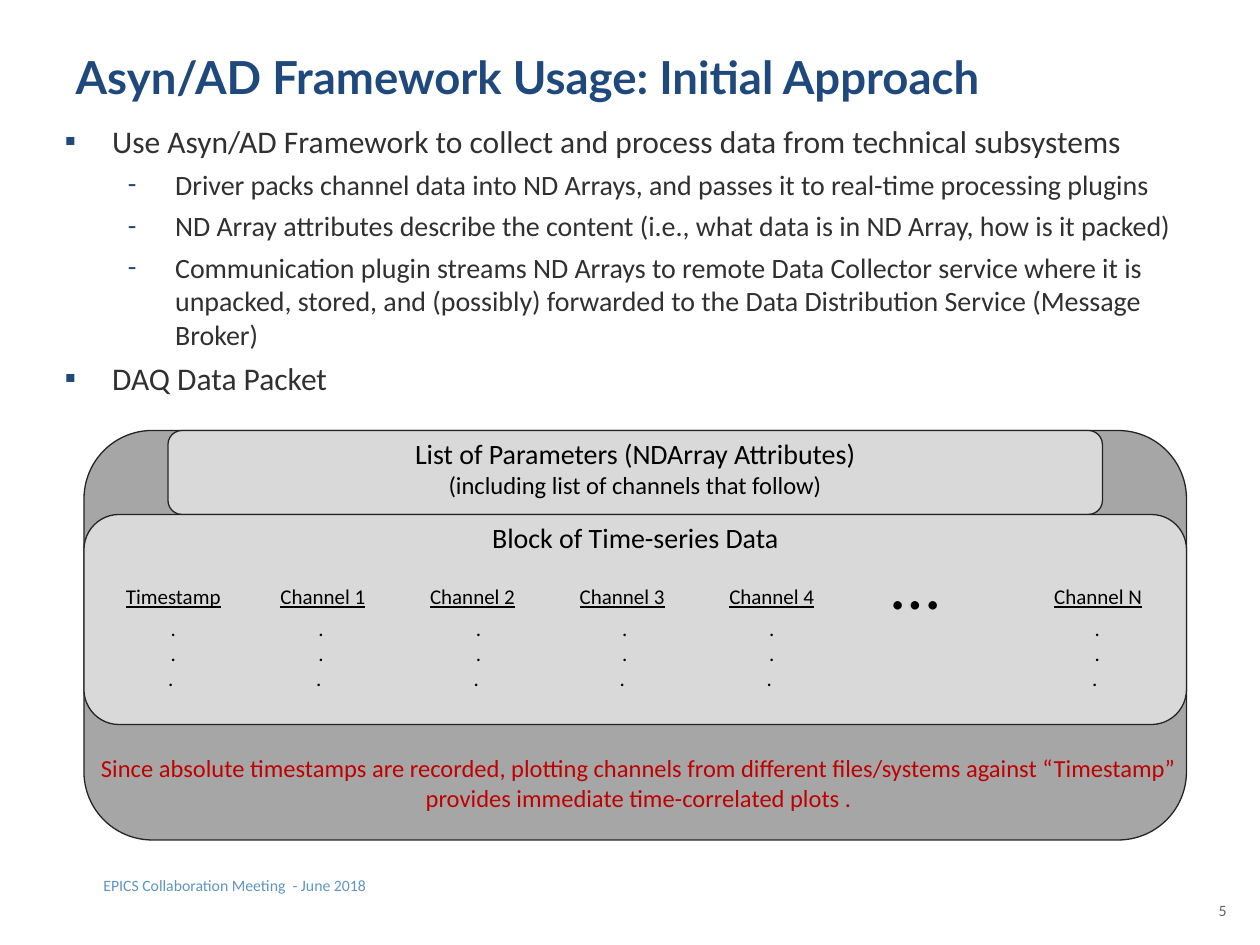
"""Build the slide on the first approach to using the Asyn/AD framework."""
from lxml.etree import SubElement
from pptx import Presentation
from pptx.dml.color import RGBColor as Rgb
from pptx.enum.shapes import MSO_SHAPE as Shape
from pptx.enum.text import MSO_ANCHOR as Anchor, PP_ALIGN as Align
from pptx.oxml.ns import qn
from pptx.util import Pt

HUES = {
    "navy": "1F497D", "text": "303030", "page": "616161", "sky": "5F95C4",
    "dark": "A6A6A6", "pale": "D9D9D9", "edge": "232425",
    "black": "000000", "red": "C00000",
}


class Deck:
    """Hold the style and the current slide."""

    def __init__(self):
        self.prs = Presentation()
        self.prs.slide_width, self.prs.slide_height = Pt(720), Pt(540)
        self.slide = self.prs.slides.add_slide(self.prs.slide_layouts[5])
        self.font = "Calibri"

    def hue(self, name):
        return Rgb.from_string(HUES[name])

    def run(self, para, text, size, hue, face=None, bold=False, under=False):
        run = para.add_run()
        run.text = text
        font = run.font
        font.name, font.size = face or self.font, Pt(size)
        font.bold, font.underline = bold, under
        font.color.rgb = self.hue(hue)

    def title(self, text, box):
        shape = self.slide.shapes.title
        shape.left, shape.top, shape.width, shape.height = map(Pt, box)
        frame = shape.text_frame
        frame.vertical_anchor = Anchor.MIDDLE
        para = frame.paragraphs[0]
        para.alignment = Align.LEFT
        self.run(para, text, 26, "navy", face="Lato", bold=True)

    def frame(self, box):
        frame = self.slide.shapes.add_textbox(*map(Pt, box)).text_frame
        frame.word_wrap = True
        return frame

    def paras(self, frame, items):
        for i, item in enumerate(items):
            yield i, frame.add_paragraph() if i else frame.paragraphs[0], item

    def text(self, box, lines, hue="black", align=Align.CENTER, under=False):
        for _, para, (text, size) in self.paras(self.frame(box), lines):
            para.alignment = align
            self.run(para, text, size, hue, under=under)

    def list(self, box, items):
        for i, para, (level, text) in self.paras(self.frame(box), items):
            para.level = level
            if i:
                para.space_before = Pt(4.5)
            self.bullet(para, "▪-"[level], (27, 63)[level])
            self.run(para, text, (18, 16)[level], "text")

    def bullet(self, para, mark, left):
        props = para._p.get_or_add_pPr()
        props.set("marL", str(Pt(left)))
        props.set("indent", str(Pt(-27)))
        tint = SubElement(props, qn("a:buClr"))
        SubElement(tint, qn("a:srgbClr")).set("val", HUES["navy"])
        SubElement(props, qn("a:buFont")).set("typeface", self.font)
        SubElement(props, qn("a:buChar")).set("char", mark)

    def block(self, box, hue):
        shape = self.slide.shapes.add_shape(Shape.ROUNDED_RECTANGLE, *map(Pt, box))
        shape.shadow.inherit = False
        shape.fill.solid()
        shape.fill.fore_color.rgb = self.hue(hue)
        shape.line.color.rgb = self.hue("edge")
        shape.line.width = Pt(0.75)


def main():
    deck = Deck()
    deck.title("Asyn/AD Framework Usage: Initial Approach", (36, 21.6, 648, 44.6))
    deck.list((30, 66, 666, 175), [
        (0, "Use Asyn/AD Framework to collect and process data from technical subsystems"),
        (1, "Driver packs channel data into ND Arrays, and passes it to real-time processing plugins"),
        (1, "ND Array attributes describe the content (i.e., what data is in ND Array, how is it packed)"),
        (1, "Communication plugin streams ND Arrays to remote Data Collector service where it is "
            "unpacked, stored, and (possibly) forwarded to the Data Distribution Service (Message Broker)"),
        (0, "DAQ Data Packet"),
    ])

    deck.block((48, 246, 630, 234), "dark")
    deck.block((96, 246, 534, 48), "pale")
    deck.block((48, 294, 630, 120), "pale")
    deck.text((96, 246, 534, 44), [
        ("List of Parameters (NDArray Attributes)", 16),
        ("(including list of channels that follow)", 14),
    ])
    deck.text((96, 294, 534, 27), [("Block of Time-series Data", 16)])

    heads = ["Timestamp"] + [f"Channel {n}" for n in range(1, 5)]
    cols = [(name, 54 + 85.5 * i) for i, name in enumerate(heads)]
    cols.append(("Channel N", 582.5))
    dots = [66, 150.5, 240.5, 324, 408, 594]
    for (name, left), dot in zip(cols, dots):
        deck.text((left, 330, 90, 22), [(name, 12)], under=True)
        deck.text((dot, 348, 66, 51), [(mark, 12) for mark in (".", ".", ". ")])
    deck.text((498, 304.5, 60, 55.5), [("… ", 40)])

    deck.text((44, 427, 642, 41), [
        ("Since absolute timestamps are recorded, plotting channels from different "
         "files/systems against “Timestamp” provides immediate time-correlated plots .", 14),
    ], "red")
    deck.text((52, 497, 468, 18), [("EPICS Collaboration Meeting  - June 2018", 9)],
              "sky", Align.LEFT)
    deck.text((678, 511, 30, 29), [("5", 9)], "page", Align.RIGHT)
    deck.prs.save("out.pptx")


if __name__ == "__main__":
    main()
